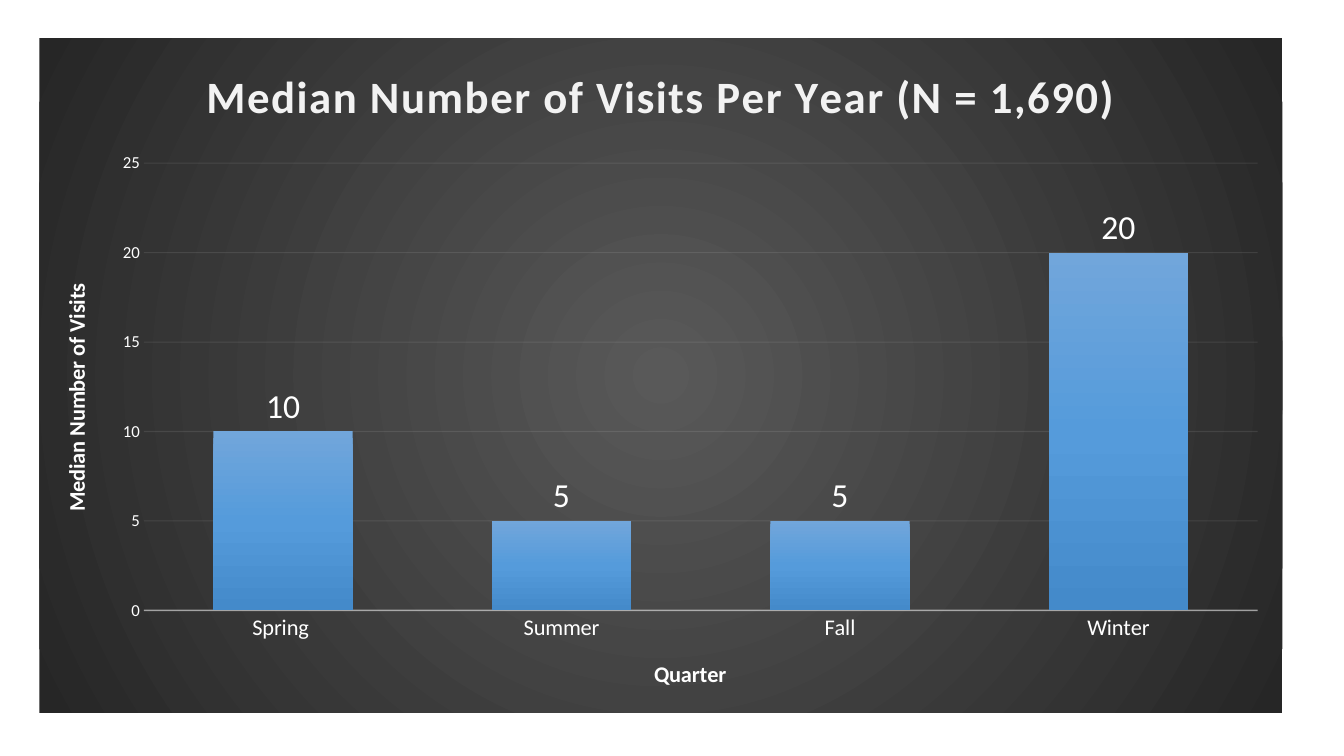
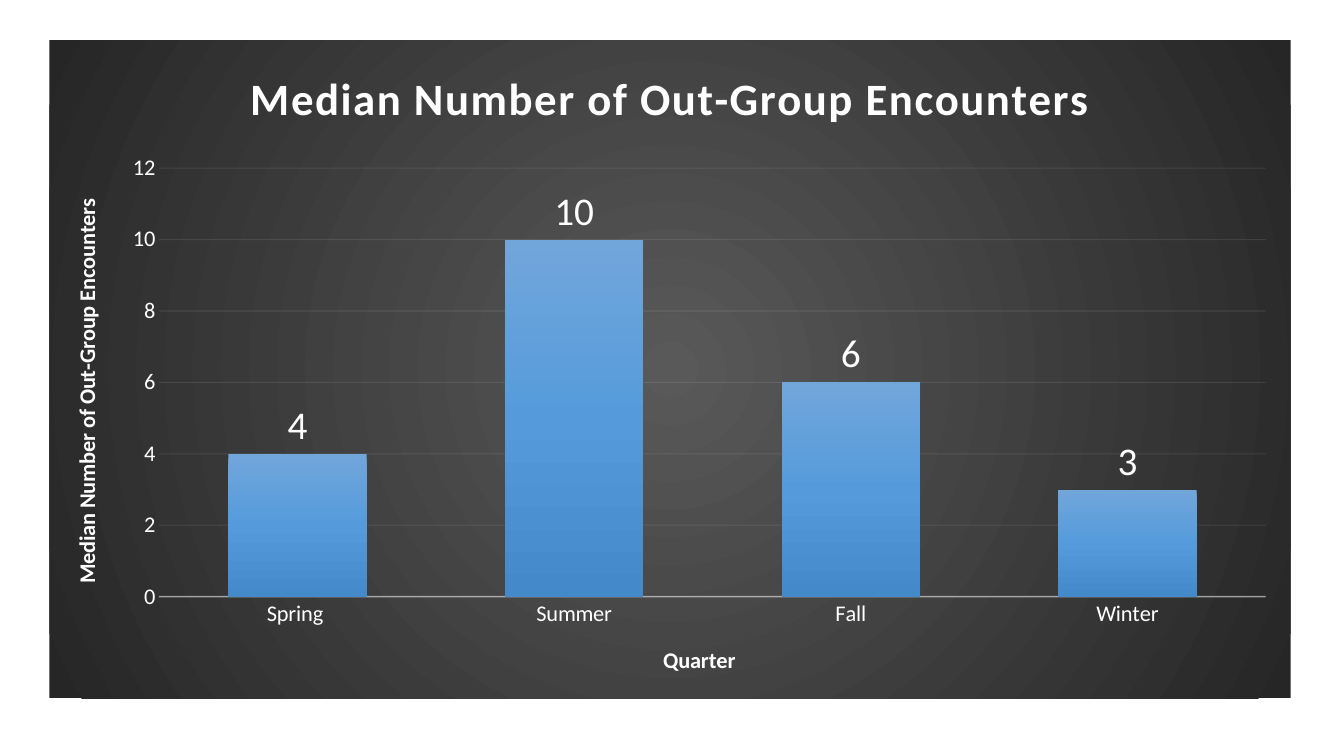
import lxml.etree
import pptx
import pptx.chart.data
import pptx.dml.color
import pptx.enum.chart
import pptx.oxml
import pptx.oxml.ns
import pptx.util

Inches, Pt, qn = pptx.util.Inches, pptx.util.Pt, pptx.oxml.ns.qn

FONT = "Calibri"
WHITE, PALE = "FFFFFF", "F2F2F2"
BACKDROP = [(0, "595959"), (100, "262626")]
BARS = [(0, "71A6DB"), (50, "559BDB"), (100, "448ACA")]
RADIAL = ('<a:path path="circle"><a:fillToRect l="50000" t="50000" '
          'r="50000" b="50000"/></a:path>')
DOWNWARD = '<a:lin ang="5400000" scaled="0"/>'
QUARTERS = ["Spring ", "Summer", "Fall", "Winter"]

CHARTS = [
    {"title": "Median Number of Visits Per Year (N = 1,690)",
     "title_color": PALE,
     "value_title": "Median Number of Visits",
     "values": [10, 5, 5, 20],
     "box": (0.39, 0.38, 12.33, 6.69),
     "value_size": 12, "label_size": 24},
    {"title": "Median Number of Out-Group Encounters",
     "title_color": WHITE,
     "value_title": "Median Number of Out-Group Encounters",
     "values": [4, 10, 6, 3],
     "box": (0.49, 0.4, 12.31, 6.53),
     "value_size": 16, "label_size": 28},
]


def rgb(color):
    return pptx.dml.color.RGBColor.from_string(color)


def set_font(font, size, color=WHITE, bold=False):
    for name, value in {"name": FONT, "size": Pt(size), "bold": bold}.items():
        setattr(font, name, value)
    font.color.rgb = rgb(color)


def gradient(stops, direction):
    """Return a gradFill element with the given stops and direction XML."""
    items = "".join(f'<a:gs pos="{pos * 1000}"><a:srgbClr val="{color}"/></a:gs>'
                    for pos, color in stops)
    return pptx.oxml.parse_xml(
        f'<a:gradFill {pptx.oxml.ns.nsdecls("a")} rotWithShape="1">'
        f'<a:gsLst>{items}</a:gsLst>{direction}</a:gradFill>')


def set_line(owner, width, opacity):
    """Draw an axis or its gridlines as a translucent pale line."""
    fmt = owner.format
    fmt.line.width = Pt(width)
    fmt.line.color.rgb = rgb(PALE)
    color = fmt._element.find(
        "/".join(qn(tag) for tag in ("c:spPr", "a:ln", "a:solidFill", "a:srgbClr")))
    lxml.etree.SubElement(color, qn("a:alpha")).set("val", str(opacity * 1000))


def set_title(title, text, size, color=WHITE):
    tf = title.text_frame
    r = tf.paragraphs[0].add_run()
    r.text = text
    set_font(r.font, size, color, bold=True)
    return tf, r


def style_axis(axis, title, size):
    axis.major_tick_mark = axis.minor_tick_mark = pptx.enum.chart.XL_TICK_MARK.NONE
    set_font(axis.tick_labels.font, size)
    return set_title(axis.axis_title, title, 16)[0]


def add_column_chart(s, spec):
    data = pptx.chart.data.CategoryChartData()
    data.categories = QUARTERS
    data.add_series("Series 1", spec["values"])
    chart = s.shapes.add_chart(
        pptx.enum.chart.XL_CHART_TYPE.COLUMN_CLUSTERED,
        *map(Inches, spec["box"]), data).chart
    set_font(chart.font, 10)
    chart.has_legend = False
    r = set_title(chart.chart_title, spec["title"], 32, spec["title_color"])[1]
    r.font._element.set("spc", "100")
    chart.chart_title.include_in_layout = False

    background = pptx.oxml.parse_xml(f'<c:spPr {pptx.oxml.ns.nsdecls("c", "a")}/>')
    background.append(gradient(BACKDROP, RADIAL))
    lxml.etree.SubElement(lxml.etree.SubElement(background, qn("a:ln")), qn("a:noFill"))
    chart.element.find(qn("c:chart")).addnext(background)

    style_axis(chart.category_axis, "Quarter", 16)
    set_line(chart.category_axis, 1, 54)
    axis = chart.value_axis
    tf = style_axis(axis, spec["value_title"], spec["value_size"])
    tf._txBody.find(qn("a:bodyPr")).set("rot", "-5400000")
    axis.format.line.fill.background()
    axis.has_major_gridlines = True
    set_line(axis.major_gridlines, 0.75, 10)

    plot = chart.plots[0]
    plot.gap_width, plot.overlap = 100, -24
    plot.vary_by_categories = False
    series = plot.series[0]
    series.invert_if_negative = False
    series.format.fill.gradient()
    fill = series.format._element.find(qn("c:spPr")).find(qn("a:gradFill"))
    fill.getparent().replace(fill, gradient(BARS, DOWNWARD))
    labels = series.data_labels
    labels.show_value = True
    labels.position = pptx.enum.chart.XL_LABEL_POSITION.OUTSIDE_END
    set_font(labels.font, spec["label_size"])


def main():
    prs = pptx.Presentation()
    prs.slide_width, prs.slide_height = Inches(13.33), Inches(7.5)
    blank = prs.slide_layouts[6]
    for spec in CHARTS:
        add_column_chart(prs.slides.add_slide(blank), spec)
    prs.save("out.pptx")


if __name__ == "__main__":
    main()
